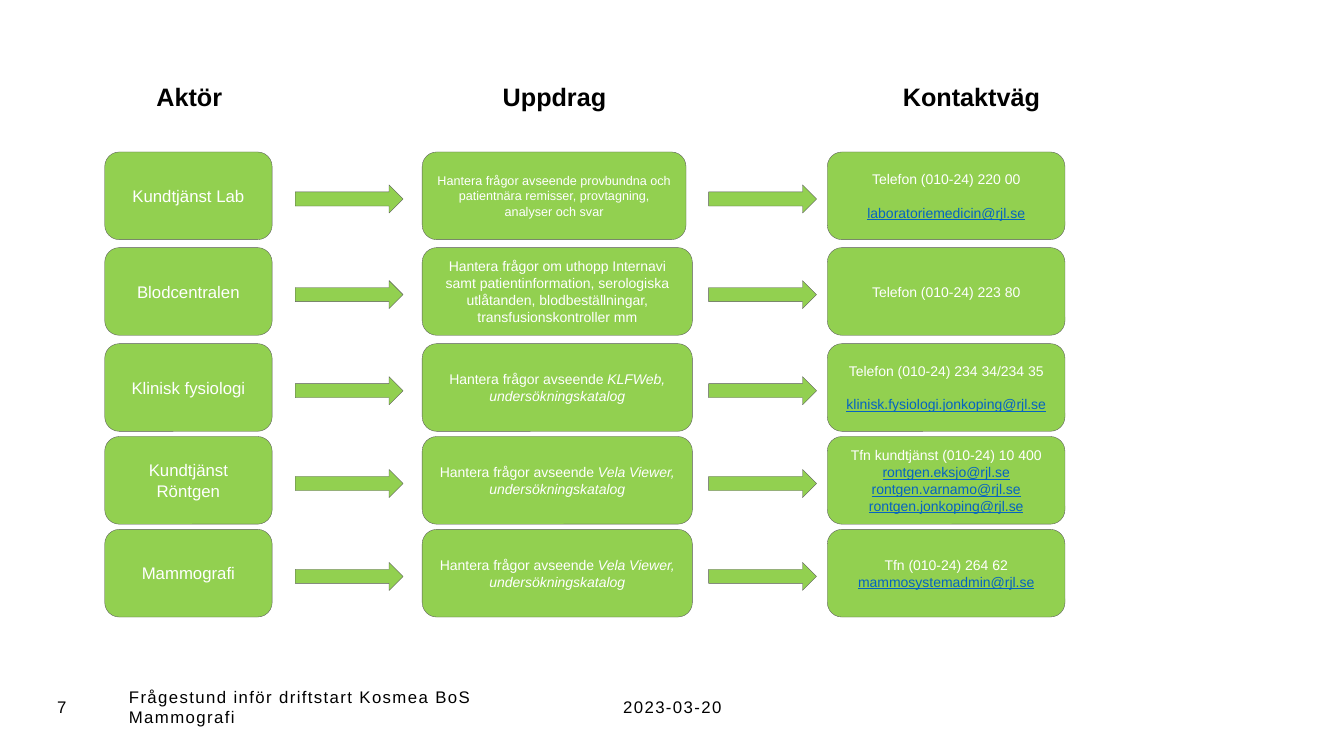
"""Builds the slide that pairs each actor with its task and contact route."""
import pptx
import pptx.dml.color
import pptx.enum.shapes
import pptx.enum.text
import pptx.util

Cm = pptx.util.Cm
Pt = pptx.util.Pt
ShapeType = pptx.enum.shapes.MSO_SHAPE
Align = pptx.enum.text.PP_ALIGN
Anchor = pptx.enum.text.MSO_ANCHOR

GREEN = pptx.dml.color.RGBColor(0x92, 0xD0, 0x50)
GREY = pptx.dml.color.RGBColor(0x59, 0x59, 0x59)
WHITE = pptx.dml.color.RGBColor(0xFF, 0xFF, 0xFF)
BLACK = pptx.dml.color.RGBColor(0x00, 0x00, 0x00)
LINK_BLUE = pptx.dml.color.RGBColor(0x05, 0x63, 0xC1)

ACTOR_LEFT, ACTOR_WIDTH = 0, 4.22
TASK_LEFT, TASK_WIDTH = 8, 6.81
CONTACT_LEFT, CONTACT_WIDTH = 18.21, 5.99
ARROW_LEFTS = (4.8, 15.22)
ARROW_WIDTH, ARROW_HEIGHT, ARROW_DROP = 2.72, 0.71, 0.83
ROW_HEIGHT = 2.21

HEADINGS = [("Aktör", 3.68, 2.18), ("Uppdrag", 12.4, 3.15), ("Kontaktväg", 22.48, 4.01)]

ROWS = [
    (3.83, "Kundtjänst Lab",
     "Hantera frågor avseende provbundna och patientnära remisser, provtagning, analyser och svar", "",
     6.65, 9, "Telefon (010-24) 220 00", ["laboratoriemedicin@rjl.se"], 12),
    (6.24, "Blodcentralen",
     "Hantera frågor om uthopp Internavi samt patientinformation, serologiska utlåtanden, "
     "blodbeställningar, transfusionskontroller mm", "",
     TASK_WIDTH, 10, "Telefon (010-24) 223 80", [], 0),
    (8.66, "Klinisk fysiologi", "Hantera frågor avseende ", "KLFWeb, undersökningskatalog",
     TASK_WIDTH, 10, "Telefon (010-24) 234 34/234 35", ["klinisk.fysiologi.jonkoping@rjl.se"], 12),
    (11, "Kundtjänst Röntgen", "Hantera frågor avseende ", "Vela Viewer, undersökningskatalog",
     TASK_WIDTH, 10, "Tfn kundtjänst (010-24) 10 400",
     ["rontgen.eksjo@rjl.se", "rontgen.varnamo@rjl.se", "rontgen.jonkoping@rjl.se"], 0),
    (13.34, "Mammografi", "Hantera frågor avseende ", "Vela Viewer, undersökningskatalog",
     TASK_WIDTH, 10, "Tfn (010-24) 264 62", ["mammosystemadmin@rjl.se"], 0),
]


def add_run(paragraph, text, size, color):
    """Append a run in Arial and return it."""
    run = paragraph.add_run()
    run.text = text
    run.font.name = "Arial"
    run.font.size = Pt(size)
    run.font.color.rgb = color
    return run


def add_green_shape(slide, shape_type, left, top, width, height):
    """Draw a green outlined shape and return its first, centred paragraph."""
    shape = slide.shapes.add_shape(shape_type, Cm(left), Cm(top), Cm(width), Cm(height))
    shape.shadow.inherit = False
    shape.fill.solid()
    shape.fill.fore_color.rgb = GREEN
    shape.line.color.rgb = GREY
    shape.line.width = Pt(0.25)
    shape.text_frame.word_wrap = True
    shape.text_frame.vertical_anchor = Anchor.MIDDLE
    paragraph = shape.text_frame.paragraphs[0]
    paragraph.alignment = Align.CENTER
    return shape.text_frame, paragraph


def add_text(slide, text, left, top, width, size, alignment, wrap=True):
    """Place one line of black text in a box and return its run."""
    box = slide.shapes.add_textbox(Cm(left), Cm(top), Cm(width), Cm(1.02))
    box.text_frame.word_wrap = wrap
    box.text_frame.vertical_anchor = Anchor.MIDDLE
    paragraph = box.text_frame.paragraphs[0]
    paragraph.alignment = alignment
    return add_run(paragraph, text, size, BLACK)


def add_headings(slide, top):
    """Write the three column headings."""
    for text, left, width in HEADINGS:
        add_text(slide, text, left, top, width, 18, Align.CENTER, wrap=False).font.bold = True


def add_contact(slide, left, top, phone, addresses, gap):
    """Draw the contact box with a phone line and underlined addresses."""
    frame, paragraph = add_green_shape(
        slide, ShapeType.ROUNDED_RECTANGLE, left, top, CONTACT_WIDTH, ROW_HEIGHT)
    add_run(paragraph, phone, 10, WHITE)
    for address in addresses:
        paragraph = frame.add_paragraph()
        paragraph.alignment = Align.CENTER
        paragraph.space_before = Pt(gap)
        add_run(paragraph, address, 10, LINK_BLUE).font.underline = True


def add_row(slide, left, row):
    """Draw one actor, its task, its contact and the arrows between them."""
    top, actor, task, system, task_width, task_size, phone, addresses, gap = row
    _, paragraph = add_green_shape(
        slide, ShapeType.ROUNDED_RECTANGLE, left + ACTOR_LEFT, top, ACTOR_WIDTH, ROW_HEIGHT)
    add_run(paragraph, actor, 12, WHITE)
    _, paragraph = add_green_shape(
        slide, ShapeType.ROUNDED_RECTANGLE, left + TASK_LEFT, top, task_width, ROW_HEIGHT)
    add_run(paragraph, task, task_size, WHITE)
    if system:
        add_run(paragraph, system, task_size, WHITE).font.italic = True
    add_contact(slide, left + CONTACT_LEFT, top, phone, addresses, gap)
    for arrow_left in ARROW_LEFTS:
        add_green_shape(slide, ShapeType.RIGHT_ARROW, left + arrow_left,
                        top + ARROW_DROP, ARROW_WIDTH, ARROW_HEIGHT)


def add_footer(slide, top):
    """Write the page number, the footer text and the date."""
    add_text(slide, "7", 1.19, top, 1.45, 12, Align.LEFT)
    title = add_text(slide, "Frågestund inför driftstart Kosmea BoS Mammografi",
                     3, top, 10.01, 12, Align.LEFT)
    date = add_text(slide, "2023-03-20", 13.49, top, 6.91, 12, Align.CENTER)
    for run in (title, date):
        run.font._element.set("spc", "100")


def main():
    """Build the slide and save it."""
    presentation = pptx.Presentation()
    presentation.slide_width = Cm(33.87)
    presentation.slide_height = Cm(19.05)
    slide = presentation.slides.add_slide(presentation.slide_layouts[6])
    add_headings(slide, 1.92)
    for row in ROWS:
        add_row(slide, 2.64, row)
    add_footer(slide, 17.3)
    presentation.save("out.pptx")


if __name__ == "__main__":
    main()
